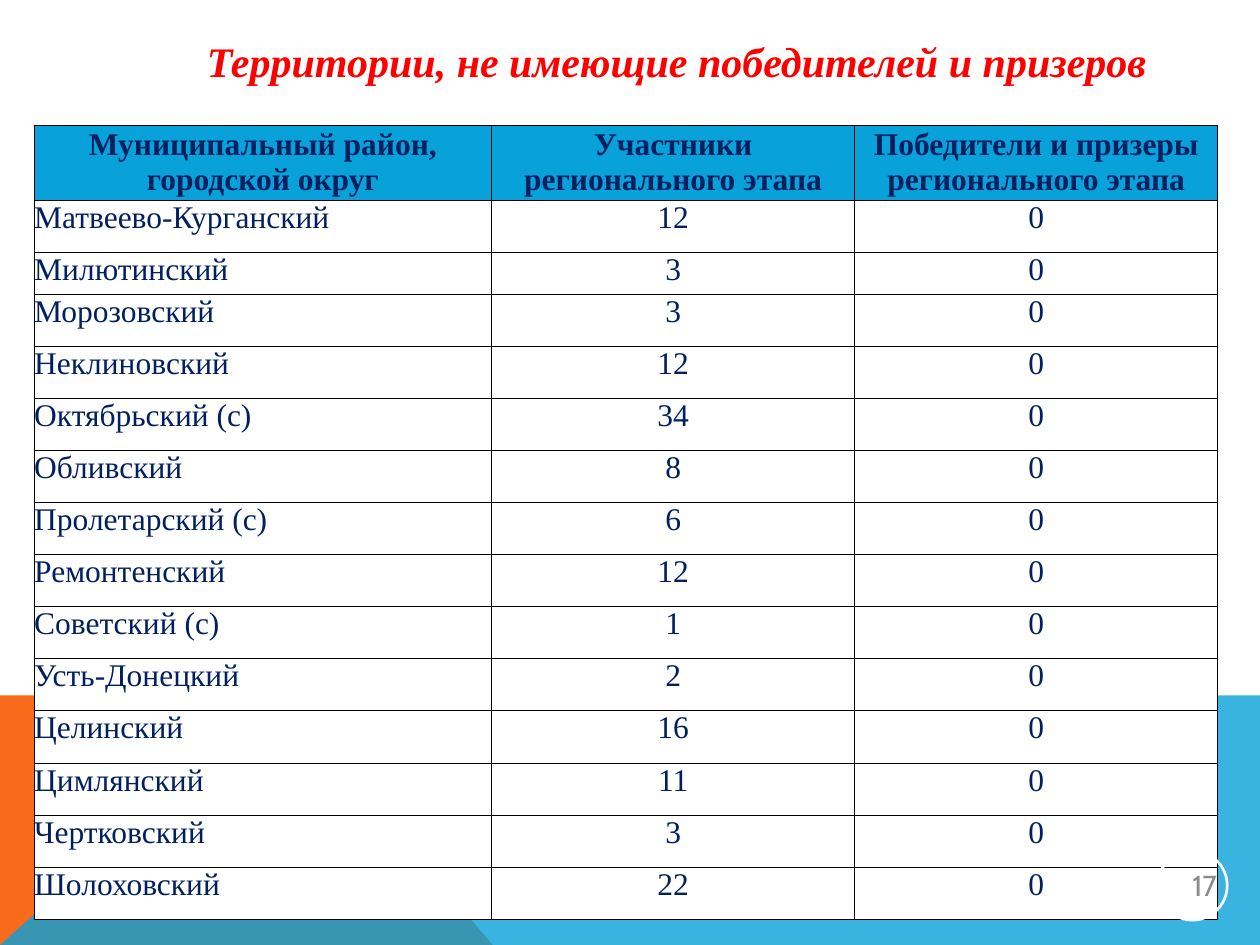
from dataclasses import dataclass
from lxml import etree
from pptx import Presentation
from pptx.dml.color import RGBColor
from pptx.enum.shapes import MSO_SHAPE
from pptx.enum.text import MSO_ANCHOR, MSO_AUTO_SIZE, PP_ALIGN
from pptx.oxml import parse_xml
from pptx.oxml.ns import qn
from pptx.util import Cm, Pt

LEFT, CENTER, RIGHT = PP_ALIGN.LEFT, PP_ALIGN.CENTER, PP_ALIGN.RIGHT
TOP, MIDDLE = MSO_ANCHOR.TOP, MSO_ANCHOR.MIDDLE
ELLIPSE = MSO_SHAPE.OVAL
FIXED_SIZE = MSO_AUTO_SIZE.NONE
DRAWING = "http://schemas.openxmlformats.org/drawingml/2006/main"


@dataclass(frozen=True)
class Theme:
    serif: str = "Times New Roman"
    sans: str = "Cabin"
    red: str = "FF0000"
    navy: str = "002060"
    blue: str = "08A1D9"
    orange: str = "F96A1B"
    gray: str = "8C8C8C"
    white: str = "FFFFFF"
    black: str = "000000"
    title_size: float = 24
    table_size: float = 18
    number_size: float = 16.5


theme = Theme()


def write(box, text, align, font, size, color, bold=False, italic=False):
    box.text_frame.text = text
    para = box.text_frame.paragraphs[0]
    para.alignment = align
    para.line_spacing = 1
    for span in para.runs:
        span.font.name = font
        span.font.size = Pt(size)
        span.font.color.rgb = RGBColor.from_string(color)
        span.font.bold = bold
        span.font.italic = italic


def clear_margins(box):
    box.margin_left = box.margin_top = box.margin_right = box.margin_bottom = 0


deck = Presentation()
deck.slide_width, deck.slide_height = Cm(25.4), Cm(19.05)
page = deck.slides.add_slide(deck.slide_layouts[5])

bands = [
    (theme.orange, 100, [(0, 19.05), (0, 14.02), (5.66, 14.02), (9.93, 19.05)]),
    (theme.blue, 80, [(0, 19.05), (5.66, 14.02), (25.4, 14.02), (25.4, 19.05)]),
]
for color, opacity, corners in bands:
    points = [(Cm(x), Cm(y)) for x, y in corners]
    builder = page.shapes.build_freeform(*points[0])
    builder.add_line_segments(points[1:], close=True)
    band = builder.convert_to_shape()
    band.shadow.inherit = False
    band.fill.solid()
    band.fill.fore_color.rgb = RGBColor.from_string(color)
    band.line.fill.background()
    if opacity < 100:
        swatch = band.fill._xPr.find(qn("a:solidFill"))[0]
        etree.SubElement(swatch, qn("a:alpha"), val=str(opacity * 1000))

title = page.shapes.title
title.left, title.top, title.width, title.height = Cm(3.38), Cm(0.71), Cm(20.52), Cm(1.02)
title.text_frame.auto_size = FIXED_SIZE
title.text_frame.word_wrap = True
title.text_frame.vertical_anchor = TOP
clear_margins(title.text_frame)
write(title, "Территории, не имеющие победителей и призеров", CENTER,
      theme.serif, theme.title_size, theme.red, bold=True, italic=True)

headings = (
    "Муниципальный район, городской округ",
    "Участники регионального этапа",
    "Победители и призеры регионального этапа",
)
participants = {
    "Матвеево-Курганcкий": 12,
    "Милютинский": 3,
    "Морозовский": 3,
    "Неклиновский": 12,
    "Октябрьский (с)": 34,
    "Обливский": 8,
    "Пролетарский (с)": 6,
    "Ремонтенский": 12,
    "Советский (с)": 1,
    "Усть-Донецкий": 2,
    "Целинский": 16,
    "Цимлянский": 11,
    "Чертковский": 3,
    "Шолоховский": 22,
}
records = [headings] + [(district, str(count), "0") for district, count in participants.items()]
column_widths = [9.22, 7.32, 7.32]
row_heights = [1.52, 1.05, 0.84] + [1.05] * (len(records) - 3)

table = page.shapes.add_table(
    len(records), len(headings), Cm(0.69), Cm(2.52),
    Cm(sum(column_widths)), Cm(sum(row_heights))).table
table.horz_banding = False
for column, width in zip(table.columns, column_widths):
    column.width = Cm(width)
for row, height in zip(table.rows, row_heights):
    row.height = Cm(height)

for row_index, record in enumerate(records):
    is_header = row_index == 0
    for column_index, text in enumerate(record):
        cell = table.cell(row_index, column_index)
        clear_margins(cell)
        cell.vertical_anchor = MIDDLE if is_header else TOP
        align = CENTER if is_header or column_index else LEFT
        write(cell, text, align, theme.serif, theme.table_size, theme.navy, bold=is_header)
        properties = cell._tc.get_or_add_tcPr()
        for side in ("lnL", "lnR", "lnT", "lnB"):
            properties.append(parse_xml(
                f'<a:{side} xmlns:a="{DRAWING}" w="{Pt(0.5)}"><a:solidFill>'
                f'<a:srgbClr val="{theme.black}"/></a:solidFill></a:{side}>'))
        cell.fill.solid()
        cell.fill.fore_color.rgb = RGBColor.from_string(theme.blue if is_header else theme.white)

badge = page.shapes.add_shape(ELLIPSE, Cm(23.34), Cm(17.15), Cm(1.4), Cm(1.4))
badge.shadow.inherit = False
badge.fill.background()
badge.line.color.rgb = RGBColor.from_string(theme.white)
badge.line.width = Pt(1.5)
badge.text_frame.vertical_anchor = MIDDLE
clear_margins(badge.text_frame)
write(badge, "17", RIGHT, theme.sans, theme.number_size, theme.gray)

deck.save("out.pptx")
